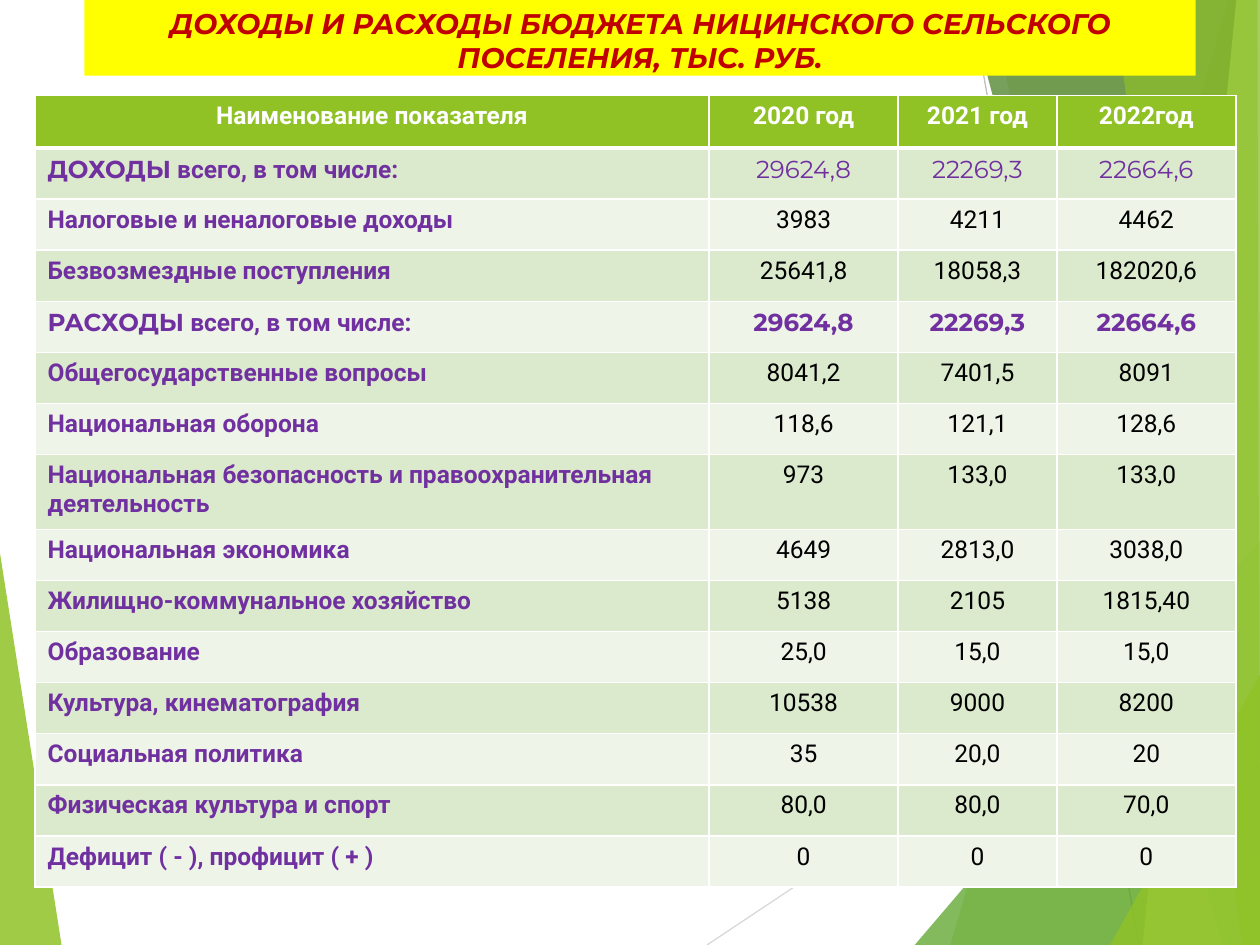
from lxml.etree import SubElement
from pptx import Presentation
from pptx.dml.color import RGBColor
from pptx.enum.text import MSO_ANCHOR, MSO_AUTO_SIZE, PP_ALIGN
from pptx.oxml.ns import qn
from pptx.util import Pt

COLORS = {
    "lime": "90C226", "green": "54A021", "forest": "3F7819", "pale": "C0E474",
    "silver": "D9D9D9", "gray": "BFBFBF", "yellow": "FFFF00", "red": "C00000",
    "purple": "7030A0", "black": "000000", "white": "FFFFFF",
    "odd_row": "DBE9CD", "even_row": "EEF4E8",
}
RAYS = [
    ((404, 540), (720, 329.5), "silver"),
    ((554.4, 0), (650.9, 540), "gray"),
]
FACETS = [
    ("lime", 85, [(0, 316), (35.2, 540), (0, 540)]),
    ("lime", 30, [(702, 0), (543, 540), (720, 540), (720, 0)]),
    ("lime", 20, [(567.5, 0), (661.6, 540), (720, 540), (720, 0)]),
    ("green", 72, [(522.7, 540), (720, 309), (720, 540)]),
    ("forest", 70, [(552.5, 0), (698.5, 540), (720, 540), (720, 0)]),
    ("pale", 70, [(706.5, 0), (653, 540), (720, 540), (720, 0)]),
    ("lime", 65, [(636, 0), (710, 540), (720, 540), (718.5, 0)]),
    ("lime", 80, [(634.3, 540), (720, 385.5), (720, 540)]),
]
TITLE = "ДОХОДЫ И РАСХОДЫ БЮДЖЕТА НИЦИНСКОГО СЕЛЬСКОГО ПОСЕЛЕНИЯ, ТЫС. РУБ."
HEADER = ("Наименование показателя", "2020 год", "2021 год", "2022год")
ROWS = [
    ("ДОХОДЫ всего, в том числе:", "29624,8", "22269,3", "22664,6"),
    ("Налоговые и неналоговые доходы", "3983", "4211", "4462"),
    ("Безвозмездные поступления", "25641,8", "18058,3", "182020,6"),
    ("РАСХОДЫ всего, в том числе:", "29624,8", "22269,3", "22664,6"),
    ("Общегосударственные вопросы", "8041,2", "7401,5", "8091"),
    ("Национальная оборона", "118,6", "121,1", "128,6"),
    ("Национальная безопасность и правоохранительная деятельность", "973", "133,0", "133,0"),
    ("Национальная экономика", "4649", "2813,0", "3038,0"),
    ("Жилищно-коммунальное хозяйство", "5138", "2105", "1815,40"),
    ("Образование", "25,0", "15,0", "15,0"),
    ("Культура, кинематография", "10538", "9000", "8200"),
    ("Социальная политика", "35", "20,0", "20"),
    ("Физическая культура и спорт", "80,0", "80,0", "70,0"),
    ("Дефицит ( - ), профицит ( + )", "0", "0", "0"),
]
TOTALS = ("ДОХОДЫ", "РАСХОДЫ")
COLUMN_SHARES = (5.35, 1.5, 1.26, 1.42)
ROW_HEIGHT, HEADER_HEIGHT, TALL_HEIGHT, TALL_ROW = 29.2, 29.9, 42.7, 7


def color(name):
    """Return the named colour."""
    return RGBColor.from_string(COLORS[name])


def style(span, size, font, tint, bold=True, italic=False):
    """Format one run."""
    span.font.size = Pt(size)
    span.font.name = font
    span.font.color.rgb = color(tint)
    span.font.bold = bold
    span.font.italic = italic


def add_backdrop(page, box):
    """Draw the thin rays and the translucent facets."""
    left, top = box[:2]
    for start, end, tint in RAYS:
        ray = page.shapes.add_connector(
            1, Pt(left + start[0]), Pt(top + start[1]), Pt(left + end[0]), Pt(top + end[1]))
        ray.line.color.rgb = color(tint)
        ray.line.width = Pt(0.75)
        SubElement(ray.element.spPr, qn("a:effectLst"))
    for tint, opacity, corners in FACETS:
        points = [(Pt(left + x), Pt(top + y)) for x, y in corners]
        builder = page.shapes.build_freeform(*points[0])
        builder.add_line_segments(points[1:], close=True)
        facet = builder.convert_to_shape()
        facet.shadow.inherit = False
        facet.line.fill.background()
        facet.fill.solid()
        facet.fill.fore_color.rgb = color(tint)
        tone = facet.element.spPr.find(".//" + qn("a:srgbClr"))
        SubElement(tone, qn("a:alpha"), val=str(opacity * 1000))


def add_title(page, box):
    """Place the title band in front of the backdrop."""
    title = page.shapes.title
    title.element.getparent().append(title.element)
    title.left, title.top, title.width, title.height = map(Pt, box)
    title.fill.solid()
    title.fill.fore_color.rgb = color("yellow")
    frame = title.text_frame
    frame.text = TITLE
    frame.word_wrap = True
    frame.auto_size = MSO_AUTO_SIZE.NONE
    frame.vertical_anchor = MSO_ANCHOR.TOP
    para = frame.paragraphs[0]
    para.alignment = PP_ALIGN.CENTER
    style(para.runs[0], 16.2, "Montserrat", "red", italic=True)


def add_borders(cell, top, bottom):
    """Give a cell white borders, with its own top and bottom widths."""
    properties = cell._tc.get_or_add_tcPr()
    for side, width in (("L", 1), ("R", 1), ("T", top), ("B", bottom)):
        line = SubElement(properties, qn(f"a:ln{side}"), w=str(Pt(width)))
        fill = SubElement(line, qn("a:solidFill"))
        SubElement(fill, qn("a:srgbClr"), val=COLORS["white"])


def fill_cell(cell, text, row, column):
    """Write and format one cell according to its row and column."""
    add_borders(cell, 3 if row == 1 else 1, 3 if row == 0 else 1)
    cell.fill.solid()
    cell.fill.fore_color.rgb = color("lime" if row == 0 else "odd_row" if row % 2 else "even_row")
    label = ROWS[row - 1][0] if row else ""
    keyword = label.split()[0] if label else ""
    total = keyword in TOTALS
    para = cell.text_frame.paragraphs[0]
    if row == 0 or column:
        para.alignment = PP_ALIGN.CENTER
    if total and column == 0:
        for part, font in ((keyword, "Montserrat"), (text[len(keyword):], "Roboto")):
            span = para.add_run()
            span.text = part
            style(span, 14, font, "purple")
        return
    para.text = text
    span = para.runs[0]
    if row == 0:
        style(span, 14, "Roboto", "white")
    elif column == 0:
        style(span, 14, "Roboto", "purple")
    elif total:
        style(span, 14, "Montserrat", "purple", bold=keyword == "РАСХОДЫ")
    else:
        style(span, 14, "Roboto", "black", bold=False)


def add_budget_table(page, box):
    """Build the table of income and spending."""
    lines = [HEADER, *ROWS]
    table = page.shapes.add_table(len(lines), len(HEADER), *map(Pt, box)).table
    for column, share in zip(table.columns, COLUMN_SHARES):
        column.width = Pt(box[2] * share / sum(COLUMN_SHARES))
    heights = {0: HEADER_HEIGHT, TALL_ROW: TALL_HEIGHT}
    for row, texts in enumerate(lines):
        table.rows[row].height = Pt(heights.get(row, ROW_HEIGHT))
        for column, text in enumerate(texts):
            fill_cell(table.cell(row, column), text, row, column)


def main():
    """Build and save the deck."""
    deck = Presentation()
    deck.slide_width, deck.slide_height = Pt(720), Pt(540)
    page = deck.slides.add_slide(deck.slide_layouts[5])
    add_backdrop(page, (0, 0, 720, 540))
    add_title(page, (48.2, 0, 635, 43.2))
    add_budget_table(page, (20, 54.7, 686.2, 452.2))
    deck.save("out.pptx")


if __name__ == "__main__":
    main()
